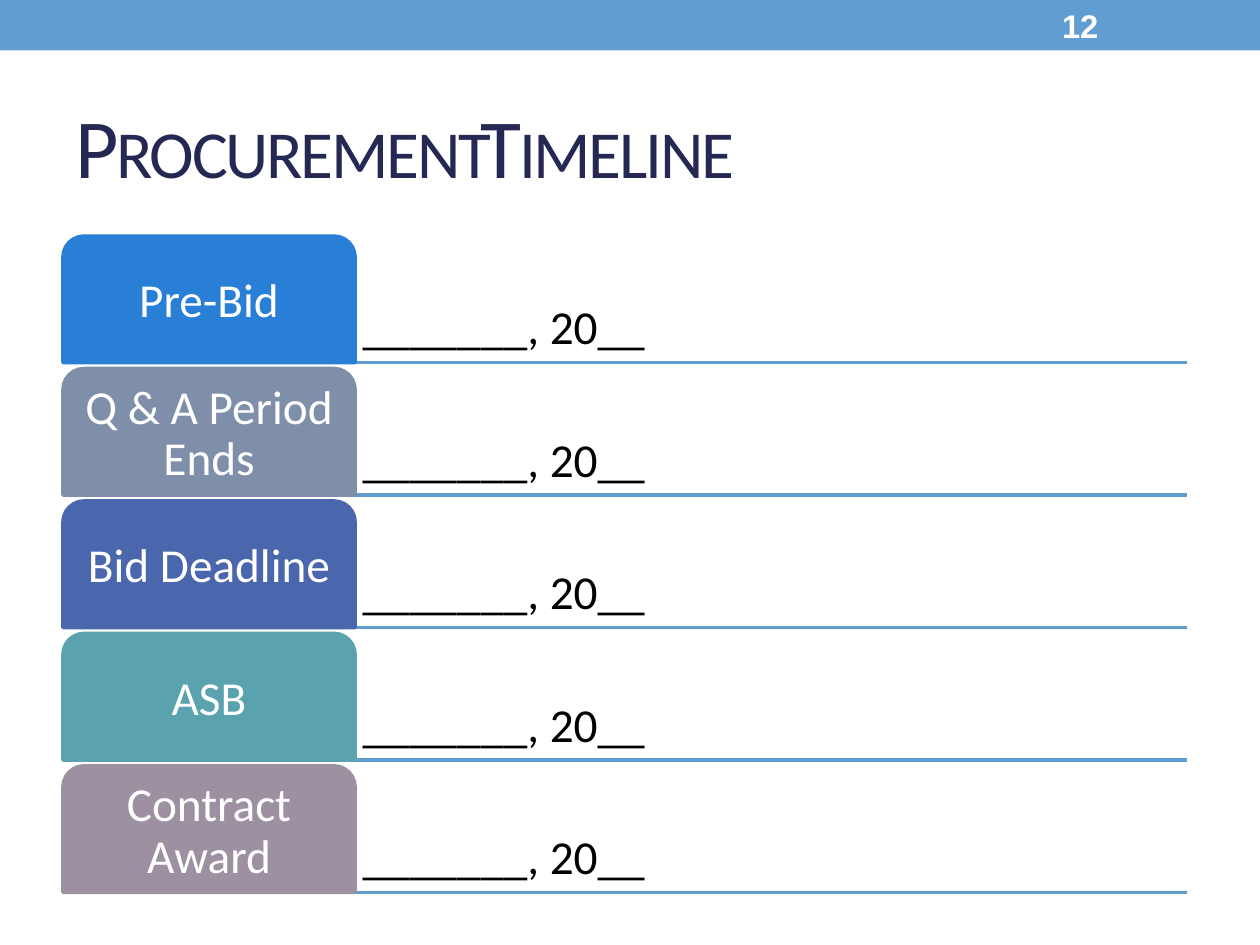
from pptx import Presentation
from pptx.dml.color import RGBColor
from pptx.enum.shapes import MSO_CONNECTOR, MSO_SHAPE
from pptx.enum.text import MSO_ANCHOR, PP_ALIGN
from pptx.oxml.ns import qn
from pptx.util import Cm, Pt
from lxml.etree import SubElement

WHITE = RGBColor(0xFF, 0xFF, 0xFF)
BLACK = RGBColor(0x00, 0x00, 0x00)
NAVY = RGBColor(0x24, 0x28, 0x52)
SKY = RGBColor(0x62, 0x9D, 0xD1)

# Content
TITLE = [("Procurement", 48), (" ", 53.3), ("Timeline", 48)]
PAGE = "12"
DATE = "_______, 20__"
STEPS = [
    ("Pre-Bid", RGBColor(0x29, 0x7F, 0xD5)),
    ("Q & A Period Ends", RGBColor(0x7F, 0x8F, 0xA9)),
    ("Bid Deadline", RGBColor(0x4A, 0x66, 0xAC)),
    ("ASB", RGBColor(0x5A, 0xA2, 0xAE)),
    ("Contract Award", RGBColor(0x9D, 0x90, 0xA0)),
]

# Layout in cm
LEFT, TOP, PITCH = 1.27, 4.76, 2.67
TAB_W, DATE_W, ROW_H = 5.89, 16.76, 2.55
LINE_W = Pt(2.08)


def write(shape, text, size=27, font="Calibri", color=BLACK, bold=False,
          align=PP_ALIGN.LEFT, anchor=MSO_ANCHOR.MIDDLE, pad=None,
          space=None, caps=False):
    """Fill a shape with one paragraph; text is a string or (text, size) runs."""
    frame = shape.text_frame
    frame.word_wrap = True
    frame.vertical_anchor = anchor
    if pad is not None:
        frame.margin_left = frame.margin_right = Cm(pad)
        frame.margin_top = frame.margin_bottom = Cm(pad)
    para = frame.paragraphs[0]
    para.alignment = align
    if space:
        para.line_spacing = space
    for part, points in [(text, size)] if isinstance(text, str) else text:
        run = para.add_run()
        run.text = part
        run.font.name = font
        run.font.size = Pt(points)
        run.font.bold = bold
        run.font.color.rgb = color
        if caps:
            props = run.font._element
            props.set("cap", "small")
            props.set("spc", "-130")


def box(slide, x, y, w, h):
    return slide.shapes.add_textbox(Cm(x), Cm(y), Cm(w), Cm(h))


def block(slide, kind, x, y, w, h, color):
    shape = slide.shapes.add_shape(kind, Cm(x), Cm(y), Cm(w), Cm(h))
    shape.shadow.inherit = False
    shape.fill.solid()
    shape.fill.fore_color.rgb = color
    return shape


def rule(slide, x, y, end):
    line = slide.shapes.add_connector(
        MSO_CONNECTOR.STRAIGHT, Cm(x), Cm(y), Cm(end), Cm(y))
    line.line.color.rgb = SKY
    line.line.width = LINE_W
    SubElement(line._element.spPr, qn("a:effectLst"))


def main():
    deck = Presentation()
    deck.slide_width, deck.slide_height = Cm(25.4), Cm(19.05)
    slide = deck.slides.add_slide(deck.slide_layouts[6])

    # Top band and title
    band = block(slide, MSO_SHAPE.RECTANGLE, 0, 0, 25.4, 1.02, SKY)
    band.line.fill.background()
    write(box(slide, LEFT, 1.47, 22.86, 2.74), TITLE, color=NAVY, caps=True)

    # Rules under the rows
    tops = [TOP + i * PITCH for i in range(len(STEPS))]
    for top in tops:
        rule(slide, LEFT, top + ROW_H, LEFT + TAB_W + DATE_W)

    # Dates and coloured tabs
    for top, (name, color) in zip(tops, STEPS):
        write(box(slide, LEFT + TAB_W, top, DATE_W, ROW_H), DATE,
              anchor=MSO_ANCHOR.BOTTOM, pad=0.15, space=0.9)
        tab = block(slide, MSO_SHAPE.ROUND_2_SAME_RECTANGLE,
                    LEFT, top, TAB_W, ROW_H, color)
        tab.line.color.rgb = color
        tab.line.width = LINE_W
        write(tab, name, color=WHITE, align=PP_ALIGN.CENTER,
              pad=0.15, space=0.9)

    # Page number
    write(box(slide, 21.16, 0.05, 2.97, 0.91), PAGE, size=18.7, font="Arial",
          color=WHITE, bold=True)

    deck.save("out.pptx")


if __name__ == "__main__":
    main()
